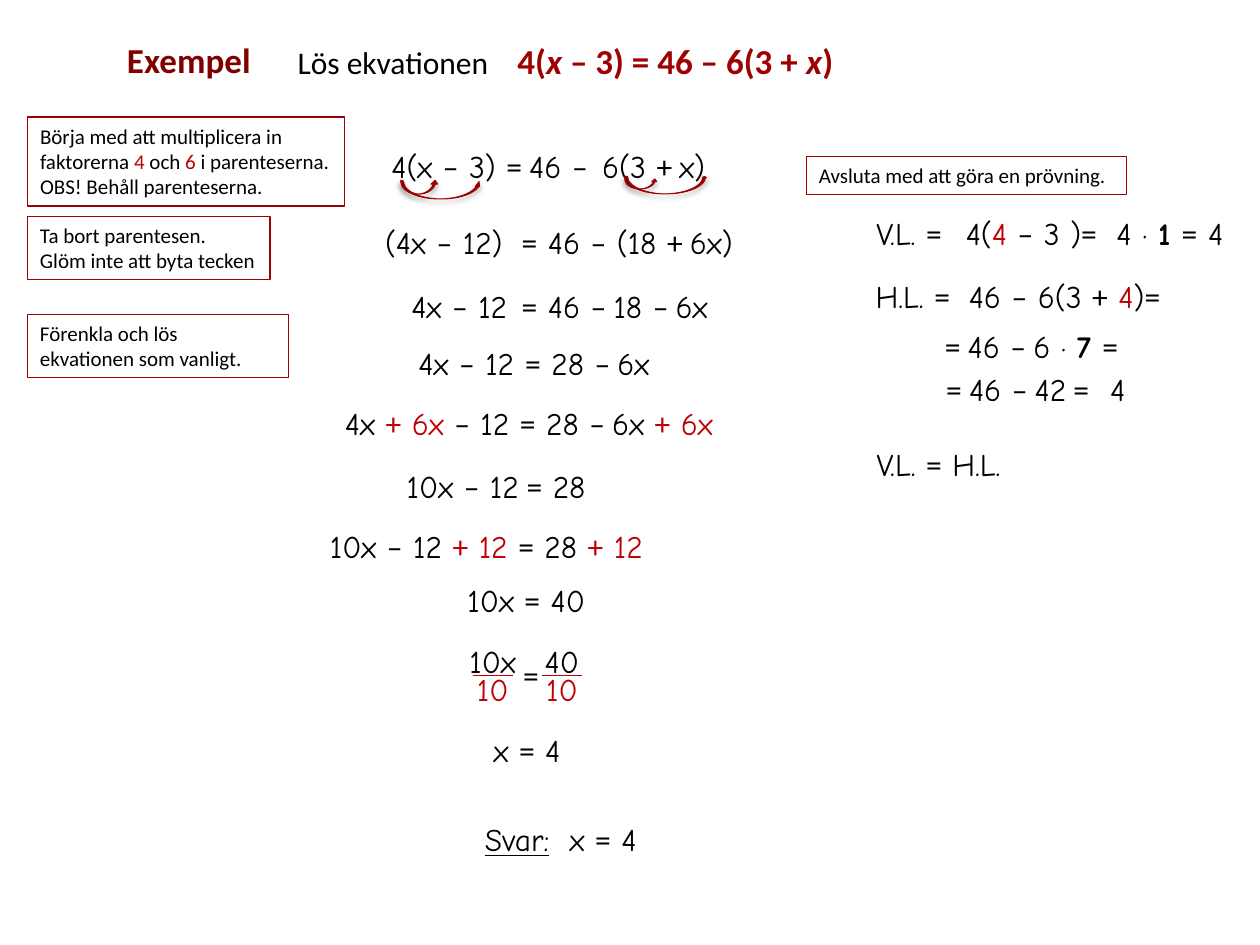
from dataclasses import dataclass
from lxml.etree import SubElement
from pptx import Presentation
from pptx.dml.color import RGBColor
from pptx.enum.shapes import MSO_CONNECTOR, MSO_SHAPE
from pptx.enum.text import MSO_ANCHOR, PP_ALIGN
from pptx.oxml.ns import qn
from pptx.util import Pt


@dataclass(frozen=True)
class Theme:
    ink: str = "000000"
    accent: str = "C00000"
    dark: str = "9F0002"
    heading: str = "800000"
    print_font: str = "Calibri"
    hand_font: str = "Comic Neue"
    title_size: int = 20
    math_size: int = 18
    note_size: int = 12
    line_height: int = 29


THEME = Theme()
OPERATORS = set("=–+")


def write_runs(paragraph, markup, size, font=None, color=THEME.ink, bold=False):
    """Runs are split by |; a leading ! is red, * bold, _ underlined, ~ italic.

    Without a given font, operators are printed and the rest is handwritten.
    """
    for part in markup.split("|"):
        mark = part[0] if part[0] in "!*_~" else ""
        run = paragraph.add_run()
        run.text = part[len(mark):]
        is_operator = bool(OPERATORS & set(run.text))
        run.font.name = font or (THEME.print_font if is_operator else THEME.hand_font)
        run.font.size = Pt(size)
        run.font.bold = bold or mark == "*"
        run.font.italic = mark == "~"
        run.font.underline = mark == "_"
        run.font.color.rgb = RGBColor.from_string(THEME.accent if mark == "!" else color)


def add_line(slide, left, top, width, markup, size=THEME.math_size,
             height=THEME.line_height, align=PP_ALIGN.LEFT, **style):
    line = slide.shapes.add_textbox(Pt(left), Pt(top), Pt(width), Pt(height))
    line.text_frame.word_wrap = True
    paragraph = line.text_frame.paragraphs[0]
    paragraph.alignment = align
    write_runs(paragraph, markup, size, **style)


def add_lines(slide, left, top, rows):
    for row_top, *parts in rows:
        for offset, width, markup in parts:
            add_line(slide, left + offset, top + row_top, width, markup)


def add_note(slide, left, top, width, height, *lines):
    note = slide.shapes.add_shape(
        MSO_SHAPE.RECTANGLE, Pt(left), Pt(top), Pt(width), Pt(height))
    note.shadow.inherit = False
    note.fill.background()
    note.line.color.rgb = RGBColor.from_string(THEME.dark)
    note.line.width = Pt(0.75)
    frame = note.text_frame
    frame.word_wrap = True
    frame.vertical_anchor = MSO_ANCHOR.TOP
    for index, markup in enumerate(lines):
        paragraph = frame.add_paragraph() if index else frame.paragraphs[0]
        paragraph.alignment = PP_ALIGN.LEFT
        write_runs(paragraph, markup, THEME.note_size, THEME.print_font)


def add_arc(slide, left, top, width, height, adjustments):
    arc = slide.shapes.add_shape(
        MSO_SHAPE.CURVED_UP_ARROW, Pt(left), Pt(top), Pt(width), Pt(height))
    for index, value in enumerate(adjustments):
        arc.adjustments[index] = value
    arc.fill.solid()
    arc.fill.fore_color.rgb = RGBColor.from_string(THEME.dark)
    arc.line.color.rgb = RGBColor.from_string(THEME.dark)
    arc.line.width = Pt(0.5)
    # Soft shadow straight below
    arc.shadow.inherit = False
    effects = arc.element.spPr.find(qn("a:effectLst"))
    shadow = SubElement(effects, qn("a:outerShdw"), blurRad=str(Pt(3.1)),
                        dist=str(Pt(1.8)), dir="5400000", rotWithShape="0")
    shade = SubElement(shadow, qn("a:srgbClr"), val=THEME.ink)
    SubElement(shade, qn("a:alpha"), val="35000")


def add_fraction(slide, left, bar_top, numerator, denominator):
    bar_width, text_width = 23, 46
    text_left = left + (bar_width - text_width) / 2
    for offset, markup in ((-22.5, numerator), (-6.8, denominator)):
        add_line(slide, text_left, bar_top + offset, text_width, markup,
                 align=PP_ALIGN.CENTER)
    bar = slide.shapes.add_connector(
        MSO_CONNECTOR.STRAIGHT, Pt(left), Pt(bar_top), Pt(left + bar_width), Pt(bar_top))
    bar.line.color.rgb = RGBColor.from_string(THEME.accent)
    bar.line.width = Pt(0.75)
    SubElement(bar.element.spPr, qn("a:effectLst"))


def add_title(slide, left, top):
    style = dict(height=32, font=THEME.print_font)
    add_line(slide, left, top, 92, "Exempel", THEME.title_size,
             color=THEME.heading, bold=True, **style)
    add_line(slide, left + 97.5, top + 2.5, 130, "Lös ekvationen", **style)
    add_line(slide, left + 223, top + 0.7, 300, "4(|~x |– 3) = 46 – 6(3 + |~x|)",
             THEME.title_size, color=THEME.dark, bold=True, **style)


def add_hints(slide, left, top):
    add_note(slide, left, top, 181, 51, "Börja med att multiplicera in",
             "faktorerna |!4 |och |!6| i parenteserna.", "OBS! Behåll parenteserna.")
    add_note(slide, left, top + 57, 138.5, 36,
             "Ta bort parentesen.", "Glöm inte att byta tecken")
    add_note(slide, left, top + 113, 149, 36,
             "Förenkla och lös", "ekvationen som vanligt.")


def add_solution(slide, left, top):
    # Steps of the equation
    add_lines(slide, left, top, [
        (0.6, (36.5, 140, "4(x |–| 3) |= |46 |–"), (157, 80, "6(3 |+ |x)")),
        (43.8, (33, 88, "(4x |–| 12)"), (111, 145, "=| 46 |–| (18 |+ |6x)")),
        (80.6, (48, 96, "4x |–| 12"), (111, 162, "=| 46 |– |18 |– |6x")),
        (113, (52, 73, "4x |–| 12"), (113, 93, "=| 28 |– |6x")),
        (147.5, (10, 250, "4x |!+|! 6x |–| 12 |=| 28 |– |6x |!+|! 6x")),
        (183.5, (45.3, 84, "10x |–| 12"), (113.8, 93, "=| 28")),
        (217.4, (1.4, 250, "10x |–| 12 |!+|! 12 |=| 28 |!+|! 12")),
        (248.3, (80, 84, "10x |=| 40")),
        (291.5, (111.8, 29, "=")),
        (334, (95, 63, "x |=| 4")),
        (385, (90, 60, "_Svar:"), (138.5, 80, "x |=| 4")),
    ])
    # Division of both sides
    add_fraction(slide, left + 90, top + 306, "10x", "!10")
    add_fraction(slide, left + 129.6, top + 306, "40", "!10")
    # Arcs from each factor into its parenthesis
    for arc_left, arc_top, width, height, bend, head in (
            (49, 23, 21.6, 7.9, 0.5, 0.281), (49, 23.7, 46, 10, 0.25, 0.281),
            (177, 22.2, 18.7, 5.8, 0.5, 0.281), (177, 20.8, 46.8, 10, 0.25, 0.063)):
        add_arc(slide, left + arc_left, top + arc_top, width, height,
                (0.157, bend, head))


def add_check(slide, left, top):
    add_note(slide, left, top, 183, 21.6, "Avsluta med att göra en prövning.")
    add_lines(slide, left, top, [
        (29, (33, 72, "V.L. |="), (84, 96, "4(|!4 |–| 3 )|="),
         (170, 70, "4 · |*1 |="), (222.5, 36, "4")),
        (65.5, (32.5, 72, "H.L. |="), (85.7, 140, "46 |–| 6(3 |+|! 4|)|=")),
        (93.6, (72, 132, "= |46 |– |6 · |*7 |=")),
        (118.5, (72.8, 110, "= |46 |– |42| ="), (166.5, 39, "4")),
        (161.3, (33, 107, "V.L. |=| H.L.")),
    ])


def main():
    presentation = Presentation()
    presentation.slide_width, presentation.slide_height = Pt(720), Pt(540)
    slide = presentation.slides.add_slide(presentation.slide_layouts[6])
    add_title(slide, 65.5, 18.5)
    add_hints(slide, 15.8, 66.8)
    add_solution(slide, 180, 80)
    add_check(slide, 460.8, 89.5)
    presentation.save("out.pptx")


if __name__ == "__main__":
    main()
